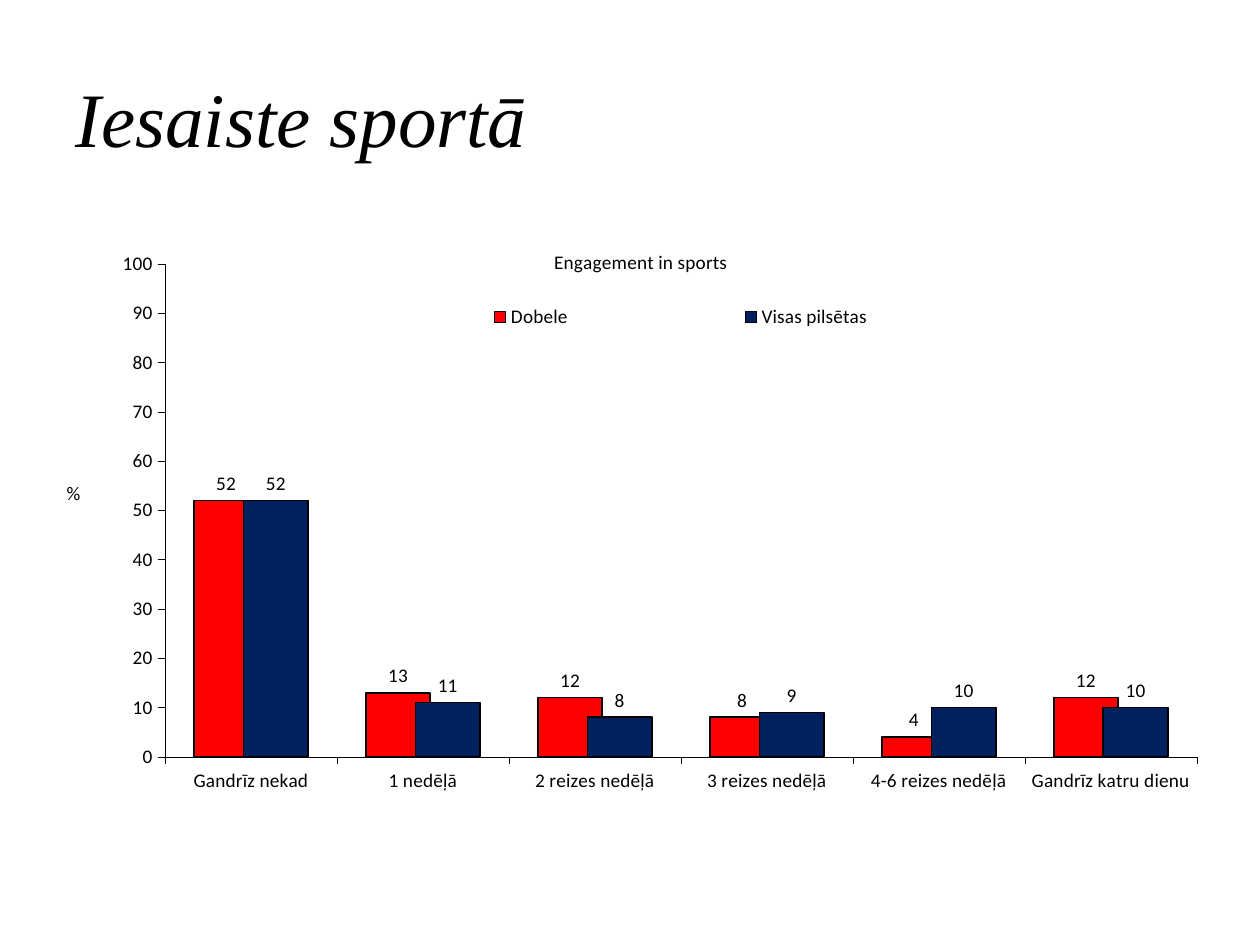
from lxml import etree
from pptx import Presentation, util as u
from pptx.chart.data import CategoryChartData
from pptx.dml.color import RGBColor
from pptx.enum import chart as ch, text
from pptx.oxml import parse_xml
from pptx.oxml.ns import nsdecls, qn

# Content
TITLE = "Iesaiste sportā"
CHART_TITLE, VALUE_TITLE = "Engagement in sports", "%"
CATEGORIES = ["Gandrīz nekad", "1 nedēļā", "2 reizes nedēļā", "3 reizes nedēļā",
              "4-6 reizes nedēļā", "Gandrīz katru dienu"]
BLACK = RGBColor(0, 0, 0)
RED = RGBColor(0xFF, 0, 0)
NAVY = RGBColor(0, 0x20, 0x60)
SERIES = [("Dobele", RED, [52, 13, 12, 8, 4, 12]),
          ("Visas pilsētas", NAVY, [52, 11, 8, 9, 10, 10])]

# Places: slide parts in inches, chart parts as shares of the chart
TITLE_BOX = (0.5, 0.3, 9, 1.25)
CHART_BOX = (0.5, 1.75, 9, 4.95)
PLOT = (0.09, 0.07, 0.91, 0.79)
LEGEND = (0.23, 0.12, 0.63, 0.07)
CHART_TITLE_AT = (0.43, 0.04)
VALUE_TITLE_AT = (0, 0.41)


def set_layout(parent, place, inner=False):
    """Put a manual layout into a chart part, in schema order."""
    for old in parent.findall(qn("c:layout")):
        parent.remove(old)
    layout = parse_xml(f"<c:layout {nsdecls('c')}><c:manualLayout/></c:layout>")
    items = [("layoutTarget", "inner")] if inner else []
    items += [("xMode", "edge"), ("yMode", "edge")] + list(zip("xywh", place))
    for tag, val in items:
        etree.SubElement(layout[0], qn("c:" + tag)).set("val", str(val))
    before = [e for e in parent if e.tag in (qn("c:tx"), qn("c:legendPos"))]
    parent.insert(parent.index(before[0]) + 1 if before else 0, layout)


def set_line(line, width):
    line.color.rgb = BLACK
    line.width = u.Pt(width)


def set_font(font):
    font.name, font.size, font.bold = "Calibri", u.Pt(11), False
    font.color.rgb = BLACK


def set_title(owner, words, place):
    tf = owner.text_frame
    tf.text = words
    set_font(tf.paragraphs[0].font)
    set_layout(owner._element, place)
    return tf


prs = Presentation()
prs.slide_width, prs.slide_height = u.Inches(10), u.Inches(7.5)
s = prs.slides.add_slide(prs.slide_layouts[5])

# Slide title
sp = s.shapes.title
sp.left, sp.top, sp.width, sp.height = map(u.Inches, TITLE_BOX)
tf = sp.text_frame
tf.text = TITLE
tf.vertical_anchor = text.MSO_ANCHOR.MIDDLE
p = tf.paragraphs[0]
p.alignment = text.PP_ALIGN.LEFT
p.font.name, p.font.size, p.font.italic = "Times New Roman", u.Pt(44), True
p.font.color.rgb = BLACK

# Chart
data = CategoryChartData(number_format="0")
data.categories = CATEGORIES
for name, _, values in SERIES:
    data.add_series(name, values)
chart = s.shapes.add_chart(ch.XL_CHART_TYPE.COLUMN_CLUSTERED,
                           *map(u.Inches, CHART_BOX), data).chart
set_font(chart.font)
set_title(chart.chart_title, CHART_TITLE, CHART_TITLE_AT)
chart.chart_title.include_in_layout = False
set_layout(chart._chartSpace.chart.plotArea, PLOT, inner=True)

# Columns
plot = chart.plots[0]
plot.gap_width, plot.overlap, plot.vary_by_categories = 90, 23, False
for series, (_, color, _) in zip(plot.series, SERIES):
    series.format.fill.solid()
    series.format.fill.fore_color.rgb = color
    set_line(series.format.line, 1)
    labels = series.data_labels
    labels.show_value = True
    labels.position = ch.XL_LABEL_POSITION.OUTSIDE_END
    labels.number_format, labels.number_format_is_linked = "0", False
    set_font(labels.font)

# Axes
val = chart.value_axis
val.minimum_scale, val.maximum_scale, val.major_unit = 0, 100, 10
val.has_major_gridlines = False
val.tick_labels.number_format = "0"
val.tick_labels.number_format_is_linked = False
for axis in (chart.category_axis, val):
    axis.major_tick_mark = ch.XL_TICK_MARK.OUTSIDE
    set_line(axis.format.line, 0.25)
    set_font(axis.tick_labels.font)
tf = set_title(val.axis_title, VALUE_TITLE, VALUE_TITLE_AT)
body = tf._txBody.bodyPr
body.set("rot", "0")
body.set("vert", "horz")

# Legend
chart.has_legend = True
chart.legend.position = ch.XL_LEGEND_POSITION.RIGHT
chart.legend.include_in_layout = False
set_font(chart.legend.font)
set_layout(chart.legend._element, LEGEND)

prs.save("out.pptx")
